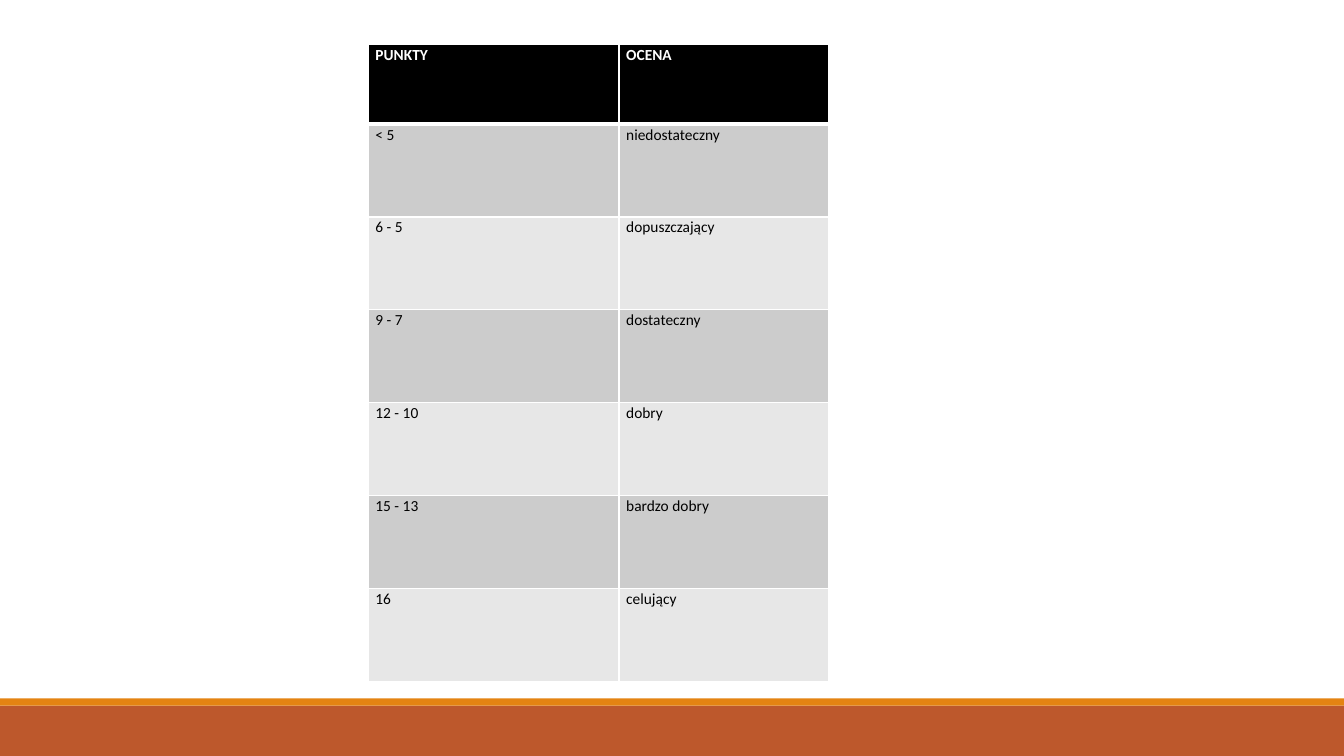
from lxml import etree
from pptx import Presentation
from pptx.dml.color import RGBColor
from pptx.enum.shapes import MSO_SHAPE
from pptx.oxml.ns import qn
from pptx.util import Cm, Pt

RECTANGLE = MSO_SHAPE.RECTANGLE
BLANK_LAYOUT = 6

WHITE = RGBColor(0xFF, 0xFF, 0xFF)
BLACK = RGBColor(0x00, 0x00, 0x00)
DARK_GREY = RGBColor(0xCC, 0xCC, 0xCC)
LIGHT_GREY = RGBColor(0xE7, 0xE7, 0xE7)
RUST = RGBColor(0xBD, 0x58, 0x2C)
ORANGE = RGBColor(0xE4, 0x83, 0x12)

GRADES = [
    ("PUNKTY", "OCENA"),
    ("< 5", "niedostateczny"),
    ("6 - 5", "dopuszczający"),
    ("9 - 7", "dostateczny"),
    ("12 - 10", "dobry"),
    ("15 - 13", "bardzo dobry"),
    ("16", "celujący"),
]
COLUMN_WIDTHS = [Cm(6.32), Cm(5.28)]
HEADER_HEIGHT = Cm(2.01)
ROW_HEIGHT = Cm(2.34)


def add_band(slide, top, height, color):
    """Add a full-width coloured band."""
    band = slide.shapes.add_shape(RECTANGLE, 0, top, Cm(33.87), height)
    band.shadow.inherit = False
    band.fill.solid()
    band.fill.fore_color.rgb = color
    band.line.fill.background()


def set_borders(cell, top_width, bottom_width):
    """Draw white borders, which must precede the fill in the cell XML."""
    properties = cell._tc.get_or_add_tcPr()
    widths = {"a:lnL": 1, "a:lnR": 1, "a:lnT": top_width, "a:lnB": bottom_width}
    for position, (tag, width) in enumerate(widths.items()):
        line = etree.Element(qn(tag), w=str(Pt(width)))
        fill = etree.SubElement(line, qn("a:solidFill"))
        etree.SubElement(fill, qn("a:srgbClr"), val=str(WHITE))
        properties.insert(position, line)


def format_cell(cell, text, row_index):
    """Write one cell and style it as header or banded row."""
    is_header = row_index == 0
    cell.margin_left = cell.margin_right = Cm(0.18)
    cell.margin_top = cell.margin_bottom = 0
    cell.fill.solid()
    if is_header:
        cell.fill.fore_color.rgb = BLACK
    else:
        cell.fill.fore_color.rgb = DARK_GREY if row_index % 2 else LIGHT_GREY
    # The line between the header and the first row is thicker
    set_borders(cell, 3 if row_index == 1 else 1, 3 if is_header else 1)

    cell.text = text
    para = cell.text_frame.paragraphs[0]
    para.line_spacing = 1.06
    para.space_after = Pt(8)
    para.font.name = "Calibri"
    para.font.size = Pt(11)
    para.font.bold = is_header
    para.font.color.rgb = WHITE if is_header else BLACK


def add_grade_table(slide):
    """Add the table of points and grades."""
    heights = [HEADER_HEIGHT] + [ROW_HEIGHT] * (len(GRADES) - 1)
    frame = slide.shapes.add_table(
        len(GRADES), len(COLUMN_WIDTHS), Cm(9.28), Cm(1.12),
        sum(COLUMN_WIDTHS), sum(heights))
    table = frame.table
    for column, width in zip(table.columns, COLUMN_WIDTHS):
        column.width = width
    for row_index, (row, texts) in enumerate(zip(table.rows, GRADES)):
        row.height = heights[row_index]
        for cell, text in zip(row.cells, texts):
            format_cell(cell, text, row_index)


def main():
    deck = Presentation()
    deck.slide_width = Cm(33.87)
    deck.slide_height = Cm(19.05)
    page = deck.slides.add_slide(deck.slide_layouts[BLANK_LAYOUT])

    # Footer bands
    add_band(page, Cm(17.78), Cm(1.27), RUST)
    add_band(page, Cm(17.6), Cm(0.18), ORANGE)

    # Grading scale
    add_grade_table(page)

    deck.save("out.pptx")


if __name__ == "__main__":
    main()
